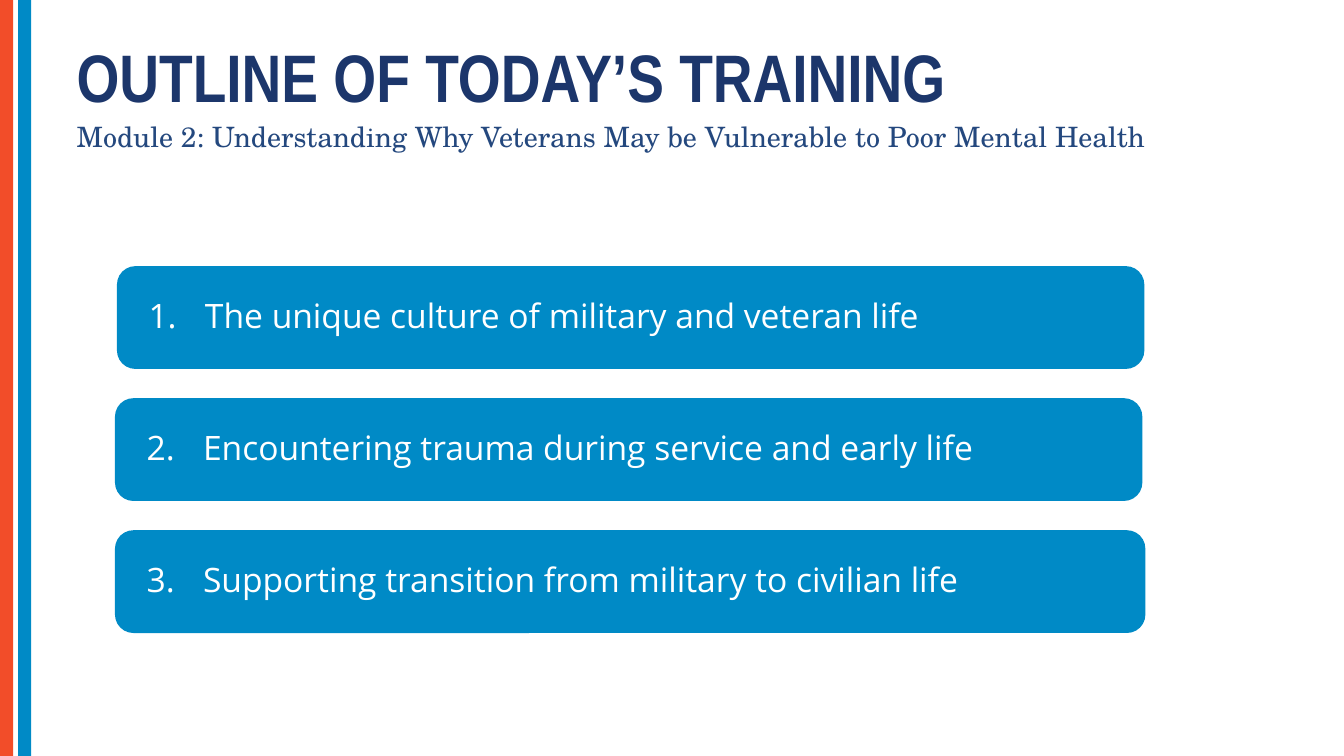
from lxml.etree import SubElement
from pptx import Presentation
from pptx.dml.color import RGBColor
from pptx.enum.shapes import MSO_SHAPE
from pptx.enum.text import MSO_ANCHOR, MSO_AUTO_SIZE, PP_ALIGN
from pptx.oxml.ns import qn
from pptx.util import Inches, Pt

ORANGE, BLUE, WHITE = "F24D29", "008AC6", "FFFFFF"
NAVY, SLATE = "1C366B", "24487E"

# Left edge, width and wording of each topic
TOPICS = [
    (1.16, 10.19, "The unique culture of military and veteran life"),
    (1.14, 10.19, "Encountering trauma during service and early life"),
    (1.14, 10.22, "Supporting transition from military to civilian life"),
]


def color(hex_code):
    return RGBColor.from_string(hex_code)


def place(part, left, top, width, height):
    part.left, part.top = Inches(left), Inches(top)
    part.width, part.height = Inches(width), Inches(height)


def write(part, text, *, font, size, fill, bold=False, spacing=0.9,
          anchor=MSO_ANCHOR.TOP, insets=(0.1, 0.05), number=None):
    frame = part.text_frame
    frame.word_wrap = True
    frame.auto_size = MSO_AUTO_SIZE.NONE
    frame.vertical_anchor = anchor
    frame.margin_left = frame.margin_right = Inches(insets[0])
    frame.margin_top = frame.margin_bottom = Inches(insets[1])
    paragraph = frame.paragraphs[0]
    if number:
        props = paragraph._p.get_or_add_pPr()
        props.set("marL", str(Inches(0.56)))
        props.set("indent", str(-Inches(0.56)))
        SubElement(props, qn("a:buFont"), typeface="+mj-lt")
        SubElement(props, qn("a:buAutoNum"), type="arabicPeriod", startAt=str(number))
    paragraph.alignment = PP_ALIGN.LEFT
    paragraph.line_spacing = spacing
    paragraph.space_before = Pt(0)
    run = paragraph.add_run()
    run.text = text
    run.font.name, run.font.size, run.font.bold = font, Pt(size), bold
    run.font.color.rgb = color(fill)


def add_block(slide, preset, box, fill):
    block = slide.shapes.add_shape(preset, *map(Inches, box))
    block.shadow.inherit = False
    block.fill.solid()
    block.fill.fore_color.rgb = color(fill)
    block.line.fill.background()
    return block


def add_side_stripes(slide, left, top, height):
    for offset, fill in ((0, ORANGE), (0.18, BLUE)):
        add_block(slide, MSO_SHAPE.RECTANGLE, (left + offset, top, 0.13, height), fill)


def add_heading(slide, left, top):
    title, module = slide.shapes.title, slide.placeholders[1]
    place(title, left, top, 9.87, 0.52)
    write(title, "OUTLINE OF TODAY’S TRAINING",
          font="Arial Narrow", size=48, fill=NAVY, bold=True)
    place(module, left, top + 0.84, 11.47, 0.36)
    write(module, "Module 2: Understanding Why Veterans May be Vulnerable to Poor Mental Health",
          font="TeX Gyre Schola", size=20, fill=SLATE, spacing=0.7)


def add_topics(slide, top, height, pitch):
    for index, (left, width, wording) in enumerate(TOPICS):
        box = (left, top + index * pitch, width, height)
        topic = add_block(slide, MSO_SHAPE.ROUNDED_RECTANGLE, box, BLUE)
        topic.adjustments[0] = 0.18
        write(topic, wording, font="Open Sans", size=24, fill=WHITE,
              anchor=MSO_ANCHOR.MIDDLE, insets=(0.26, 0.04), number=index + 1)


def main():
    deck = Presentation()
    deck.slide_width, deck.slide_height = Inches(13.33), Inches(7.5)
    slide = deck.slides.add_slide(deck.slide_layouts[2])
    slide.background.fill.solid()
    slide.background.fill.fore_color.rgb = color(WHITE)
    add_side_stripes(slide, 0, 0, 7.5)
    add_heading(slide, 0.66, 0.39)
    add_topics(slide, 2.64, 1.02, 1.31)
    deck.save("out.pptx")


if __name__ == "__main__":
    main()
